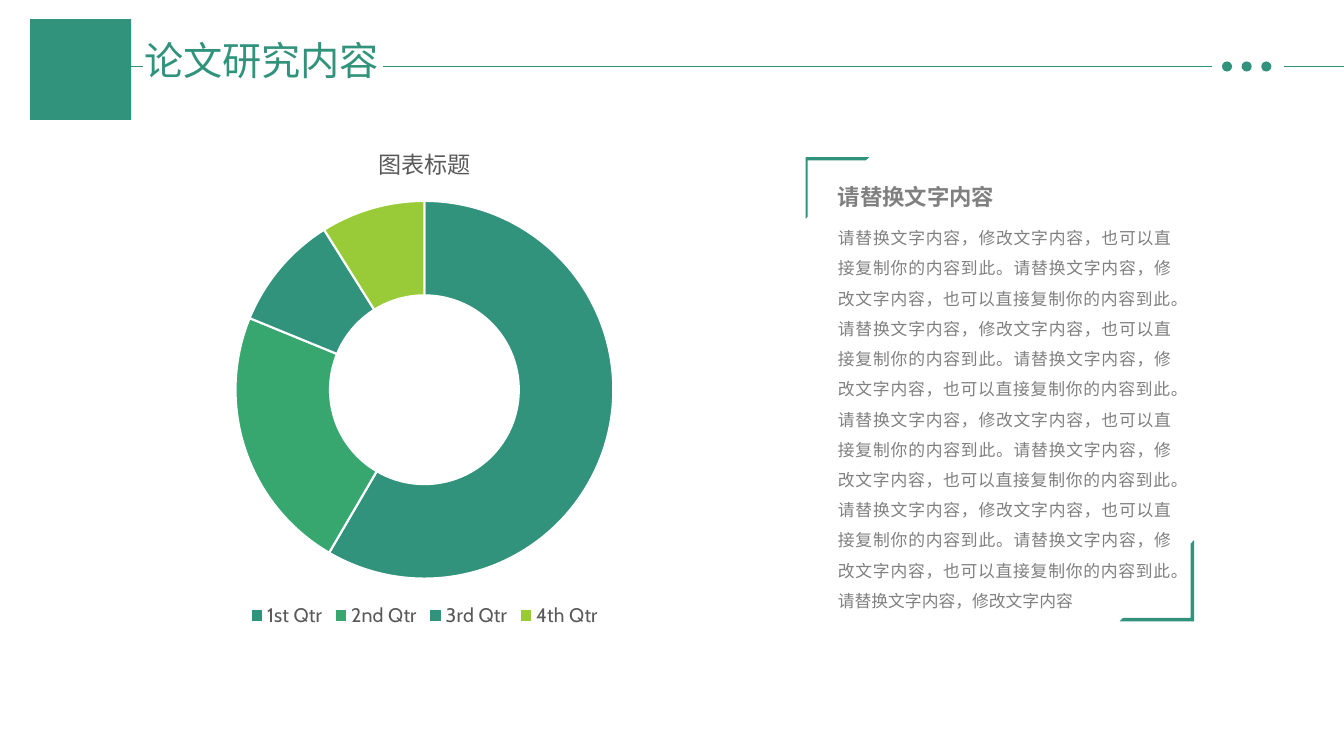
from pptx import Presentation
from pptx.chart.data import CategoryChartData
from pptx.dml.color import RGBColor
from pptx.enum.chart import XL_CHART_TYPE, XL_LEGEND_POSITION
from pptx.enum.shapes import MSO_CONNECTOR, MSO_SHAPE
from pptx.enum.text import MSO_ANCHOR, MSO_AUTO_SIZE, PP_ALIGN
from pptx.oxml.ns import qn
from pptx.util import Inches, Pt
from lxml.etree import SubElement

GREEN, GREY, DARK, WHITE = "31937B", "808080", "595959", "FFFFFF"
PHRASE = "请替换文字内容，修改文字内容"
BODY = (PHRASE + "，也可以直接复制你的内容到此。") * 8 + PHRASE


def paint(fmt, color):
    fmt.solid()
    fmt.fore_color.rgb = RGBColor.from_string(color)


def style(font, size, color, name, bold=False):
    font.size, font.name, font.bold = Pt(size), name, bold
    font.color.rgb = RGBColor.from_string(color)


def place(shape, x, y, w, h):
    shape.left, shape.top = Inches(x), Inches(y)
    shape.width, shape.height = Inches(w), Inches(h)


def plain(shape):
    shape.shadow.inherit = False
    paint(shape.fill, GREEN)
    shape.line.fill.background()


def add_solid(slide, kind, x, y, w, h):
    shape = slide.shapes.add_shape(kind, Inches(x), Inches(y), Inches(w), Inches(h))
    plain(shape)
    return shape


def add_rule(slide, x1, x2, y):
    rule = slide.shapes.add_connector(
        MSO_CONNECTOR.STRAIGHT, Inches(x1), Inches(y), Inches(x2), Inches(y))
    paint(rule.line.fill, GREEN)
    rule.line.width = Pt(0.5)
    SubElement(rule._element.spPr, qn("a:effectLst"))


def curve(a, b, c, d, steps=20):
    """Points along a cubic Bezier."""
    def mix(t, i):
        u = 1 - t
        return u**3 * a[i] + 3 * u * u * t * b[i] + 3 * u * t * t * c[i] + t**3 * d[i]
    return [(mix(n / steps, 0), mix(n / steps, 1)) for n in range(steps + 1)]


def add_cap(slide, x, y):
    # Board, bowl and tassel, measured from the cap's top left corner
    board = [(0, .18), (.01, .17), (.45, 0), (.47, 0), (.91, .17), (.92, .18),
             (.91, .2), (.48, .43), (.465, .435), (.45, .43), (.13, .26), (.11, .27),
             (.11, .39), (.13, .41), (.13, .46)]
    tassel = curve((.13, .46), (.15, .52), (.17, .6), (.12, .65)) + [
        (.12, .61), (.1, .66), (.095, .6), (.09, .64), (.08, .61), (.08, .65)]
    tassel += curve((.08, .65), (.04, .6), (.04, .53), (.08, .46))
    cord = [(.07, .42), (.09, .39), (.09, .24), (.01, .2)]
    bowl = curve((.21, .49), (.21, .66), (.71, .66), (.71, .49)) + [
        (.71, .36), (.705, .34), (.69, .34), (.48, .45), (.465, .455), (.45, .45),
        (.23, .34), (.215, .34), (.21, .36)]
    paths = [board + tassel + cord, bowl]
    build = slide.shapes.build_freeform(*paths[0][0], scale=Inches(1))
    for n, path in enumerate(paths):
        if n:
            build.move_to(*path[0])
        build.add_line_segments(path[1:], close=True)
    plain(build.convert_to_shape(Inches(x), Inches(y)))


def add_header(slide, x, y):
    add_cap(slide, x, y)
    # Title
    title = slide.shapes.title
    place(title, x + 1.03, y - 0.02, 2.56, 0.66)
    frame = title.text_frame
    frame.text = "论文研究内容"
    frame.word_wrap, frame.auto_size = False, MSO_AUTO_SIZE.SHAPE_TO_FIT_TEXT
    frame.vertical_anchor = MSO_ANCHOR.TOP
    para = frame.paragraphs[0]
    para.alignment, para.line_spacing = PP_ALIGN.LEFT, 1.3
    style(para.font, 28, GREEN, "Noto Sans CJK SC")
    SubElement(para.font._element, qn("a:ea"), typeface="Noto Sans CJK SC")
    # Rules and dots on one level
    level = y + 0.47
    for x1, x2 in [(3.8, 12.02), (0.55, 1.42), (12.74, 13.33)]:
        add_rule(slide, x1, x2, level)
    for n in range(3):
        add_solid(slide, MSO_SHAPE.OVAL, 12.12 + 0.195 * n, level - 0.05, 0.1, 0.1)


def add_ring(slide, x, y, w, h):
    data = CategoryChartData()
    data.categories = ["1st Qtr", "2nd Qtr", "3rd Qtr", "4th Qtr"]
    data.add_series("Series 1", [59, 23, 10, 9])
    chart = slide.shapes.add_chart(
        XL_CHART_TYPE.DOUGHNUT, Inches(x), Inches(y), Inches(w), Inches(h), data).chart
    style(chart.font, 14, DARK, "Cabin")
    # Title and legend
    chart.has_title = True
    head = chart.chart_title.text_frame
    head.text = "图表标题"
    style(head.paragraphs[0].font, 16.5, DARK, "Cabin")
    chart.has_legend = True
    chart.legend.position = XL_LEGEND_POSITION.BOTTOM
    chart.legend.include_in_layout = False
    style(chart.legend.font, 14, DARK, "Cabin")
    # Slices
    plot = chart.plots[0]
    plot.vary_by_categories = True
    for n, color in enumerate([GREEN, "37A76F", GREEN, "99CB38"]):
        part = plot.series[0].points[n].format
        paint(part.fill, color)
        paint(part.line.fill, WHITE)
        part.line.width = Pt(1.5)


def fill_text(shape, text, size, align, bold=False):
    frame = shape.text_frame
    frame.text = text
    frame.word_wrap, frame.auto_size = True, MSO_AUTO_SIZE.SHAPE_TO_FIT_TEXT
    frame.vertical_anchor = MSO_ANCHOR.TOP
    frame.margin_left = frame.margin_right = frame.margin_top = frame.margin_bottom = 0
    para = frame.paragraphs[0]
    para.alignment, para.line_spacing, para.space_before = align, 1.5, Pt(7.5)
    style(para.font, size, GREY, "Arial", bold)
    props = para._p.get_or_add_pPr()
    props.set("marL", "0")
    props.set("indent", "0")
    SubElement(props, qn("a:buNone"))


def add_panel(slide, x, y, w):
    # Heading and body
    head = slide.shapes.add_textbox(Inches(x), Inches(y), Inches(w), Inches(0.36))
    fill_text(head, "请替换文字内容", 16, PP_ALIGN.LEFT, True)
    body = slide.placeholders[1]
    place(body, x, y + 0.48, w, 3.94)
    fill_text(body, BODY, 12, PP_ALIGN.JUSTIFY)
    # Corner frames
    top = add_solid(slide, MSO_SHAPE.HALF_FRAME, x - 0.32, y - 0.12, 0.63, 0.61)
    top.adjustments[0], top.adjustments[1] = 0.053, 0.034
    low = add_solid(slide, MSO_SHAPE.HALF_FRAME, x + 2.76, y + 3.71, 0.81, 0.74)
    low.adjustments[0] = low.adjustments[1] = 0.047
    low.rotation = 90
    low._element.spPr.find(qn("a:xfrm")).set("flipH", "1")


def main():
    deck = Presentation()
    deck.slide_width, deck.slide_height = Inches(13.33), Inches(7.5)
    slide = deck.slides.add_slide(deck.slide_layouts[1])
    paint(slide.background.fill, WHITE)
    add_ring(slide, 0.43, 1.23, 7.56, 5.04)
    add_panel(slide, 8.31, 1.68, 3.31)
    add_header(slide, 0.3, 0.19)
    deck.save("out.pptx")


if __name__ == "__main__":
    main()
